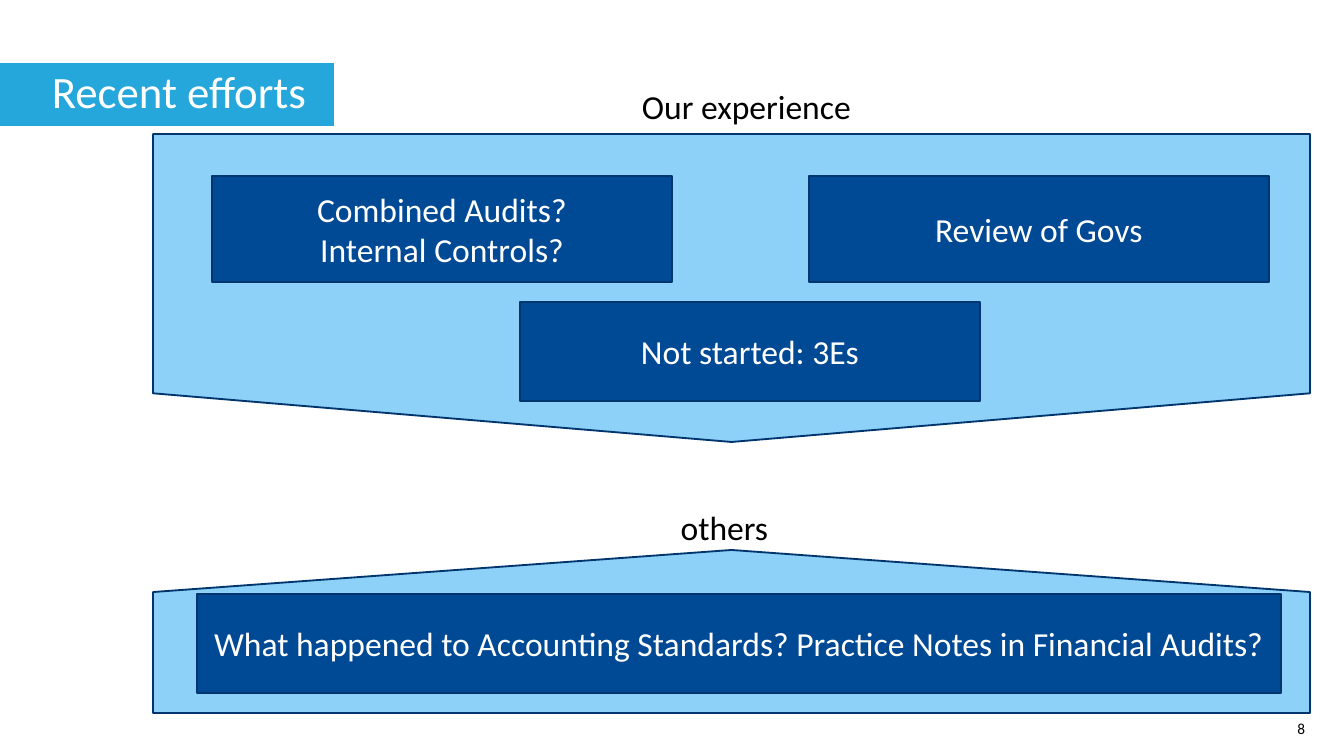
from pptx import Presentation
from pptx.dml.color import RGBColor
from pptx.enum import shapes, text
from pptx.util import Emu, Pt

PX = 914400 / 134.4
PAGE_SIZE = (1344, 756)
SKY, NAVY, EDGE, CYAN = "8DD0F8", "004994", "00366D", "25A7DB"
WHITE, BLACK = "FFFFFF", "000000"

PENTAGONS = [
    ((153, 134, 1157, 308), 90, 0.158),
    ((153, 550, 1157, 163), 270, 0.258),
]
CARDS = [
    ((212, 176, 460, 106), ["Combined Audits?", "Internal Controls?"]),
    ((809, 176, 460, 106), ["Review of Govs"]),
    ((520, 302, 460, 99), ["Not started: 3Es"]),
    ((197, 594, 1084, 99), ["What happened to Accounting Standards? Practice Notes in Financial Audits?"]),
]
TITLE = ((0, 63, 334, 63), ["Recent efforts"])
LABELS = [
    ((414, 83, 692, 63), ["Our experience"]),
    ((392, 504, 692, 63), ["others"]),
]
PAGE_NUMBER = ((1200, 712, 118, 32), ["8"])


def px(*values):
    return [Emu(round(value * PX)) for value in values]


def color(value):
    return RGBColor.from_string(value)


def paint(shape, fill):
    shape.fill.solid()
    shape.fill.fore_color.rgb = color(fill)


def add_block(page, kind, bounds, fill):
    shape = page.shapes.add_shape(kind, *px(*bounds))
    shape.shadow.inherit = False
    paint(shape, fill)
    shape.line.color.rgb = color(EDGE)
    shape.line.width = Pt(1)
    return shape


def add_pentagon(page, bounds, rotation, point):
    left, top, width, height = bounds
    shift = (width - height) / 2
    upright = (left + shift, top - shift, height, width)
    shape = add_block(page, shapes.MSO_SHAPE.PENTAGON, upright, SKY)
    shape.adjustments[0] = point
    shape.rotation = rotation


def write(shape, lines, size=18, ink=BLACK, align="CENTER", anchor="TOP",
          spacing=1.0, before=0, insets=(13, 7, 13, 7), wrap=True, grow=False):
    frame = shape.text_frame
    frame.word_wrap = wrap
    frame.auto_size = text.MSO_AUTO_SIZE.SHAPE_TO_FIT_TEXT if grow else text.MSO_AUTO_SIZE.NONE
    frame.vertical_anchor = text.MSO_ANCHOR[anchor]
    (frame.margin_left, frame.margin_top,
     frame.margin_right, frame.margin_bottom) = px(*insets)
    for index, line in enumerate(lines):
        para = frame.add_paragraph() if index else frame.paragraphs[0]
        para.alignment = text.PP_ALIGN[align]
        para.line_spacing = spacing
        para.space_before = Pt(before)
        span = para.add_run()
        span.text = line
        span.font.name = "Calibri"
        span.font.size = Pt(size)
        span.font.color.rgb = color(ink)


def add_text(page, bounds, lines, fill=None, **style):
    box = page.shapes.add_textbox(*px(*bounds))
    if fill:
        paint(box, fill)
    write(box, lines, **style)


def main():
    deck = Presentation()
    deck.slide_width, deck.slide_height = px(*PAGE_SIZE)
    page = deck.slides.add_slide(deck.slide_layouts[6])

    add_text(page, *PAGE_NUMBER, size=8.2, align="RIGHT", grow=True)
    for pentagon in PENTAGONS:
        add_pentagon(page, *pentagon)
    add_text(page, *TITLE, fill=CYAN, size=24, ink=WHITE, align="LEFT", spacing=0.9,
             before=7.5, insets=(52, 7, 27, 7), wrap=False, grow=True)
    for bounds, lines in CARDS:
        card = add_block(page, shapes.MSO_SHAPE.RECTANGLE, bounds, NAVY)
        write(card, lines, ink=WHITE, anchor="MIDDLE")
    for bounds, lines in LABELS:
        add_text(page, bounds, lines, spacing=0.9, insets=(0, 7, 27, 7))

    deck.save("out.pptx")


if __name__ == "__main__":
    main()
